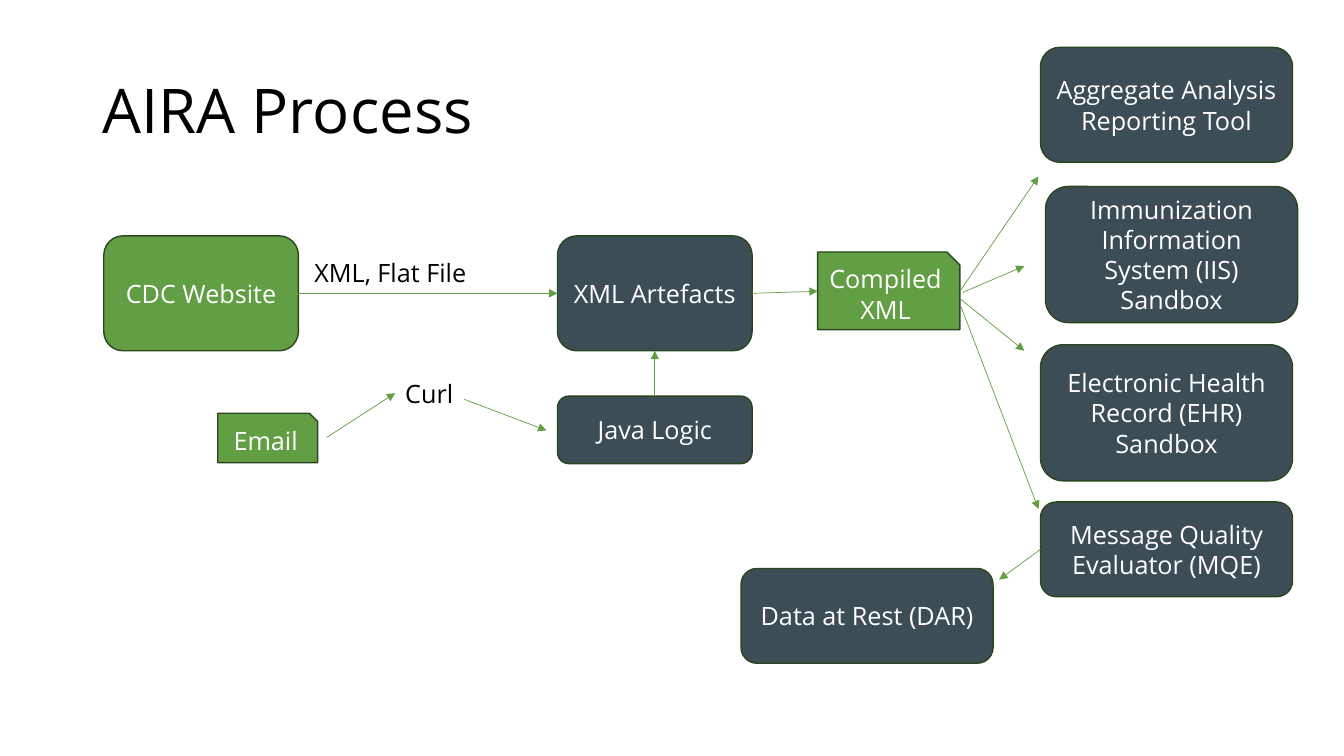
from dataclasses import dataclass

from lxml import etree
from pptx import Presentation
from pptx.dml.color import RGBColor
from pptx.enum.shapes import MSO_CONNECTOR, MSO_SHAPE
from pptx.enum.text import MSO_ANCHOR, MSO_AUTO_SIZE, PP_ALIGN
from pptx.oxml.ns import qn
from pptx.util import Inches, Pt

ROUND = MSO_SHAPE.ROUNDED_RECTANGLE
SNIP = MSO_SHAPE.SNIP_1_RECTANGLE
STRAIGHT = MSO_CONNECTOR.STRAIGHT
MIDDLE = MSO_ANCHOR.MIDDLE
LEFT, CENTER = PP_ALIGN.LEFT, PP_ALIGN.CENTER
NO_FIT, GROW = MSO_AUTO_SIZE.NONE, MSO_AUTO_SIZE.SHAPE_TO_FIT_TEXT
SITE_TOP, SITE_LEFT, SITE_BOTTOM, SITE_RIGHT = range(4)


@dataclass(frozen=True)
class Theme:
    font: str = "Open Sans"
    title_size: int = 44
    body_size: int = 18
    green: str = "629F44"
    slate: str = "3D4D55"
    outline: str = "2B461E"
    white: str = "FFFFFF"
    black: str = "000000"
    outline_width: float = 1
    arrow_width: float = 0.5


THEME = Theme()

TITLE = ("AIRA Process", (0.92, 0.4, 11.5, 1.45))

BOXES = {
    "website": ("CDC Website", ROUND, THEME.green, (1.03, 2.34, 1.93, 1.14)),
    "artefacts": ("XML Artefacts", ROUND, THEME.slate, (5.53, 2.34, 1.93, 1.14)),
    "email": ("Email", SNIP, THEME.green, (2.16, 4.1, 0.99, 0.49)),
    "java": ("Java Logic", ROUND, THEME.slate, (5.53, 3.93, 1.93, 0.67)),
    "compiled": ("Compiled XML", SNIP, THEME.green, (8.11, 2.5, 1.41, 0.77)),
    "aggregate": ("Aggregate Analysis Reporting Tool", ROUND, THEME.slate, (10.32, 0.47, 2.5, 1.14)),
    "iis": ("Immunization Information System (IIS) Sandbox", ROUND, THEME.slate, (10.37, 1.85, 2.5, 1.35)),
    "ehr": ("Electronic Health Record (EHR) Sandbox", ROUND, THEME.slate, (10.32, 3.42, 2.5, 1.35)),
    "mqe": ("Message Quality Evaluator (MQE)", ROUND, THEME.slate, (10.32, 4.98, 2.5, 0.94)),
    "dar": ("Data at Rest (DAR)", ROUND, THEME.slate, (7.35, 5.64, 2.5, 0.94)),
}

LABELS = [
    ("XML, Flat File", (3.02, 2.5, 1.72, 0.4)),
    ("Curl", (3.92, 3.7, 0.68, 0.4)),
]

ARROWS = [
    ((2.96, 2.91), (5.53, 2.91), ("website", SITE_RIGHT), ("artefacts", SITE_LEFT)),
    ((3.24, 4.34), (3.92, 3.9), None, None),
    ((4.6, 3.96), (5.42, 4.27), None, None),
    ((6.5, 3.93), (6.5, 3.48), ("java", SITE_TOP), ("artefacts", SITE_BOTTOM)),
    ((7.46, 2.91), (8.11, 2.89), ("artefacts", SITE_RIGHT), None),
    ((9.52, 2.89), (10.3, 1.75), None, None),
    ((9.55, 2.9), (10.16, 2.64), None, None),
    ((9.53, 2.97), (10.16, 3.48), None, None),
    ((9.53, 3.04), (10.3, 5.05), None, None),
    ((10.32, 5.44), (9.91, 5.75), ("mqe", SITE_LEFT), None),
]


def inches(values):
    return [Inches(v) for v in values]


def write(tf, text, size, color, align):
    p = tf.paragraphs[0]
    p.text = text
    p.alignment = align
    p.font.name = THEME.font
    p.font.size = Pt(size)
    p.font.color.rgb = RGBColor.from_string(color)
    return p


def add_title(slide):
    text, at = TITLE
    sp = slide.shapes.title
    sp.left, sp.top, sp.width, sp.height = inches(at)
    tf = sp.text_frame
    tf.auto_size = NO_FIT
    tf.vertical_anchor = MIDDLE
    write(tf, text, THEME.title_size, THEME.black, LEFT).line_spacing = 0.9


def add_box(slide, text, kind, fill, at):
    sp = slide.shapes.add_shape(kind, *inches(at))
    sp.shadow.inherit = False
    sp.fill.solid()
    sp.fill.fore_color.rgb = RGBColor.from_string(fill)
    sp.line.color.rgb = RGBColor.from_string(THEME.outline)
    sp.line.width = Pt(THEME.outline_width)
    tf = sp.text_frame
    tf.word_wrap = True
    tf.vertical_anchor = MIDDLE
    write(tf, text, THEME.body_size, THEME.white, CENTER)
    return sp


def add_label(slide, text, at):
    tf = slide.shapes.add_textbox(*inches(at)).text_frame
    tf.word_wrap = False
    tf.auto_size = GROW
    write(tf, text, THEME.body_size, THEME.black, LEFT)


def add_arrow(slide, boxes, start, end, source, target):
    line = slide.shapes.add_connector(STRAIGHT, *inches(start + end))
    if source:
        line.begin_connect(boxes[source[0]], source[1])
    if target:
        line.end_connect(boxes[target[0]], target[1])
    line.line.color.rgb = RGBColor.from_string(THEME.green)
    line.line.width = Pt(THEME.arrow_width)
    sp_pr = line._element.spPr
    etree.SubElement(sp_pr.find(qn("a:ln")), qn("a:tailEnd"), type="triangle")
    etree.SubElement(sp_pr, qn("a:effectLst"))


def main():
    prs = Presentation()
    prs.slide_width, prs.slide_height = Inches(13.33), Inches(7.5)
    slide = prs.slides.add_slide(prs.slide_layouts.get_by_name("Title Only"))
    add_title(slide)
    boxes = {name: add_box(slide, *box) for name, box in BOXES.items()}
    for label in LABELS:
        add_label(slide, *label)
    for arrow in ARROWS:
        add_arrow(slide, boxes, *arrow)
    prs.save("out.pptx")


if __name__ == "__main__":
    main()
